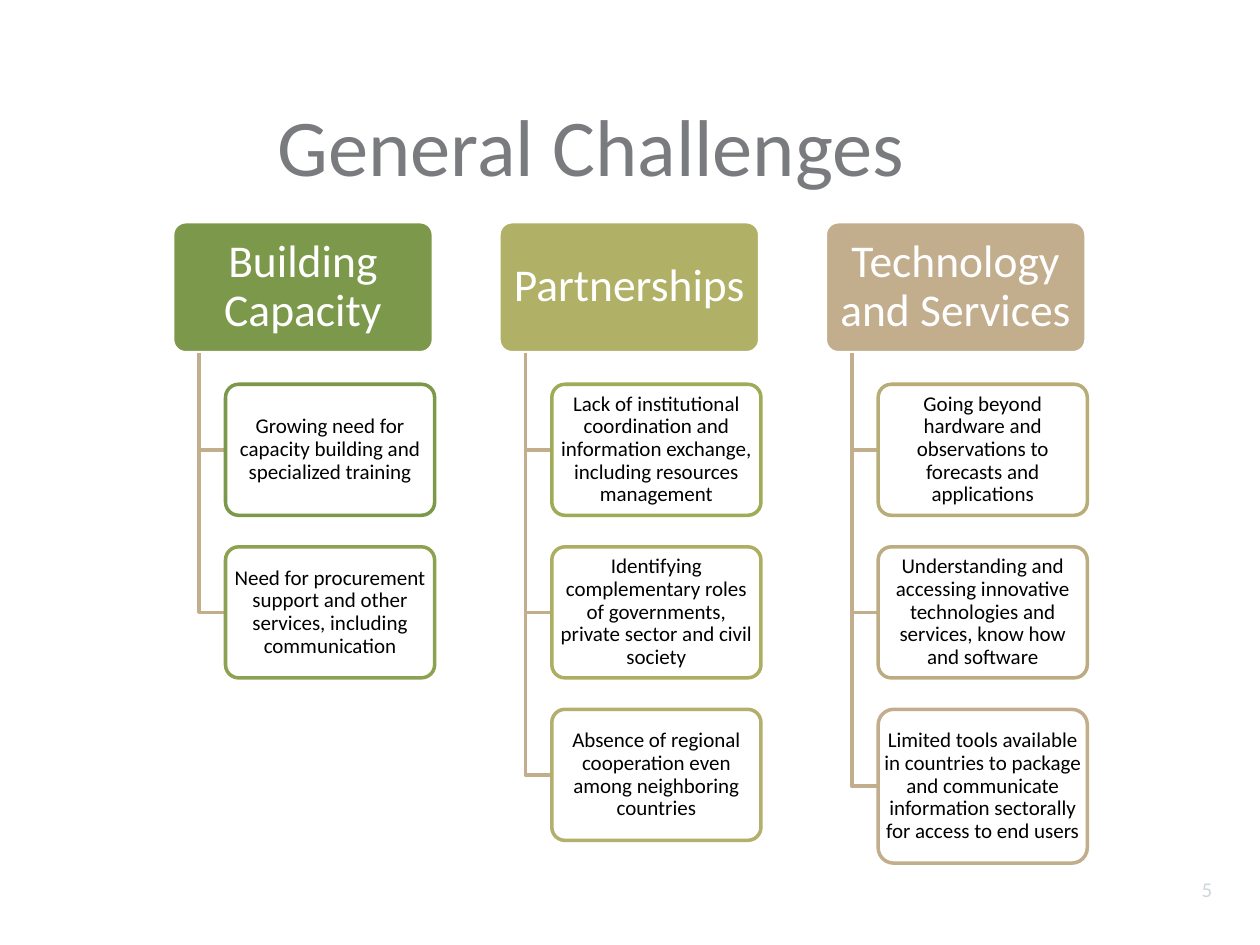
from dataclasses import dataclass

from lxml import etree
from pptx import Presentation
from pptx.dml.color import RGBColor
from pptx.enum.shapes import MSO_SHAPE
from pptx.enum.text import MSO_ANCHOR, MSO_AUTO_SIZE, PP_ALIGN
from pptx.oxml.ns import qn
from pptx.util import Inches, Pt

ROUNDED = MSO_SHAPE.ROUNDED_RECTANGLE
MIDDLE, BOTTOM = MSO_ANCHOR.MIDDLE, MSO_ANCHOR.BOTTOM
CENTER, RIGHT = PP_ALIGN.CENTER, PP_ALIGN.RIGHT
NO_FIT = MSO_AUTO_SIZE.NONE


@dataclass(frozen=True)
class Theme:
    font: str = "Calibri"
    title_color: str = "797B7E"
    number_color: str = "CDD7D9"
    branch_color: str = "C2AD8D"
    white: str = "FFFFFF"
    black: str = "000000"
    title_size: int = 46
    header_size: int = 26
    card_size: int = 12
    line_width: int = 2
    card_opacity: int = 90


@dataclass(frozen=True)
class Grid:
    left: float = 1.37
    top: float = 1.76
    column_step: float = 2.59
    row_step: float = 1.29
    header_width: float = 2.07
    card_width: float = 1.66
    row_height: float = 1.04
    spine_indent: float = 0.21
    card_indent: float = 0.42

    def column(self, index):
        return self.left + index * self.column_step

    def row(self, index):
        return self.top + index * self.row_step


THEME = Theme()
GRID = Grid()

CHALLENGES = [
    ("Building Capacity", "7C984A", [
        ("Growing need for capacity building and specialized training", "7C984A", 1.04),
        ("Need for procurement support and other services, including communication",
         "8DA250", 1.04),
    ]),
    ("Partnerships", "B1B067", [
        ("Lack of institutional coordination and information exchange, "
         "including resources management", "9FAB56", 1.04),
        ("Identifying complementary roles of governments, private sector and civil society",
         "ACAF62", 1.04),
        ("Absence of regional cooperation even among neighboring countries", "B4AF6D", 1.04),
    ]),
    ("Technology and Services", "C2AD8D", [
        ("Going beyond hardware and observations to forecasts and applications",
         "B8AD77", 1.04),
        ("Understanding and accessing innovative technologies and services, "
         "know how and software", "BDAC82", 1.04),
        ("Limited tools available in countries to package and communicate "
         "information sectorally for access to end users", "C2AD8D", 1.22),
    ]),
]


def color(value):
    return RGBColor.from_string(value)


def write_text(shape, text, size, text_color, alignment=CENTER, anchor=MIDDLE):
    frame = shape.text_frame
    frame.word_wrap = True
    frame.auto_size = NO_FIT
    frame.vertical_anchor = anchor
    paragraph = frame.paragraphs[0]
    paragraph.alignment = alignment
    run = paragraph.add_run()
    run.text = text
    run.font.name = THEME.font
    run.font.size = Pt(size)
    run.font.color.rgb = color(text_color)
    return frame


def set_line(shape, line_color):
    shape.shadow.inherit = False
    shape.line.color.rgb = color(line_color)
    shape.line.width = Pt(THEME.line_width)


def add_box(slide, box, fill_color, line_color, text, size, text_color, insets):
    shape = slide.shapes.add_shape(ROUNDED, *map(Inches, box))
    shape.adjustments[0] = 0.1
    shape.fill.solid()
    shape.fill.fore_color.rgb = color(fill_color)
    set_line(shape, line_color)
    frame = write_text(shape, text, size, text_color)
    frame.margin_left = frame.margin_right = Inches(insets[0])
    frame.margin_top = frame.margin_bottom = Inches(insets[1])
    frame.paragraphs[0].line_spacing = 0.9
    return shape


def set_opacity(shape, percent):
    fill = shape.fill._xPr.find(qn("a:solidFill"))
    etree.SubElement(fill[0], qn("a:alpha"), val=str(percent * 1000))


def add_branch(slide, left, top, right, bottom):
    builder = slide.shapes.build_freeform(Inches(left), Inches(top))
    corners = [(left, bottom), (right, bottom)]
    builder.add_line_segments([(Inches(x), Inches(y)) for x, y in corners], close=False)
    branch = builder.convert_to_shape()
    branch.fill.background()
    set_line(branch, THEME.branch_color)


def add_card(slide, column_left, row, text, line_color, height):
    left = column_left + GRID.card_indent
    top = GRID.row(row)
    add_branch(slide, column_left + GRID.spine_indent, GRID.top + GRID.row_height,
               left, top + height / 2)
    card = add_box(slide, (left, top, GRID.card_width, height), THEME.white, line_color,
                   text, THEME.card_size, THEME.black, (0.01, 0.02))
    set_opacity(card, THEME.card_opacity)


def add_column(slide, index, heading, fill_color, cards):
    left = GRID.column(index)
    add_box(slide, (left, GRID.top, GRID.header_width, GRID.row_height), fill_color,
            THEME.white, heading, THEME.header_size, THEME.white, (0.05, 0.04))
    for row, card in enumerate(cards, start=1):
        add_card(slide, left, row, *card)


def add_title(slide, text):
    title = slide.shapes.title
    title.left, title.top = Inches(0.29), Inches(0.12)
    title.width, title.height = Inches(8.8), Inches(1.46)
    write_text(title, text, THEME.title_size, THEME.title_color, anchor=BOTTOM)


def add_slide_number(slide, number):
    box = slide.shapes.add_textbox(Inches(8.64), Inches(6.86), Inches(1.08), Inches(0.4))
    write_text(box, number, THEME.card_size, THEME.number_color, RIGHT)


def main():
    presentation = Presentation()
    presentation.slide_width, presentation.slide_height = Inches(10), Inches(7.5)
    slide = presentation.slides.add_slide(presentation.slide_layouts[5])
    add_title(slide, "General Challenges")
    add_slide_number(slide, "5")
    for index, challenge in enumerate(CHALLENGES):
        add_column(slide, index, *challenge)
    presentation.save("out.pptx")


if __name__ == "__main__":
    main()
